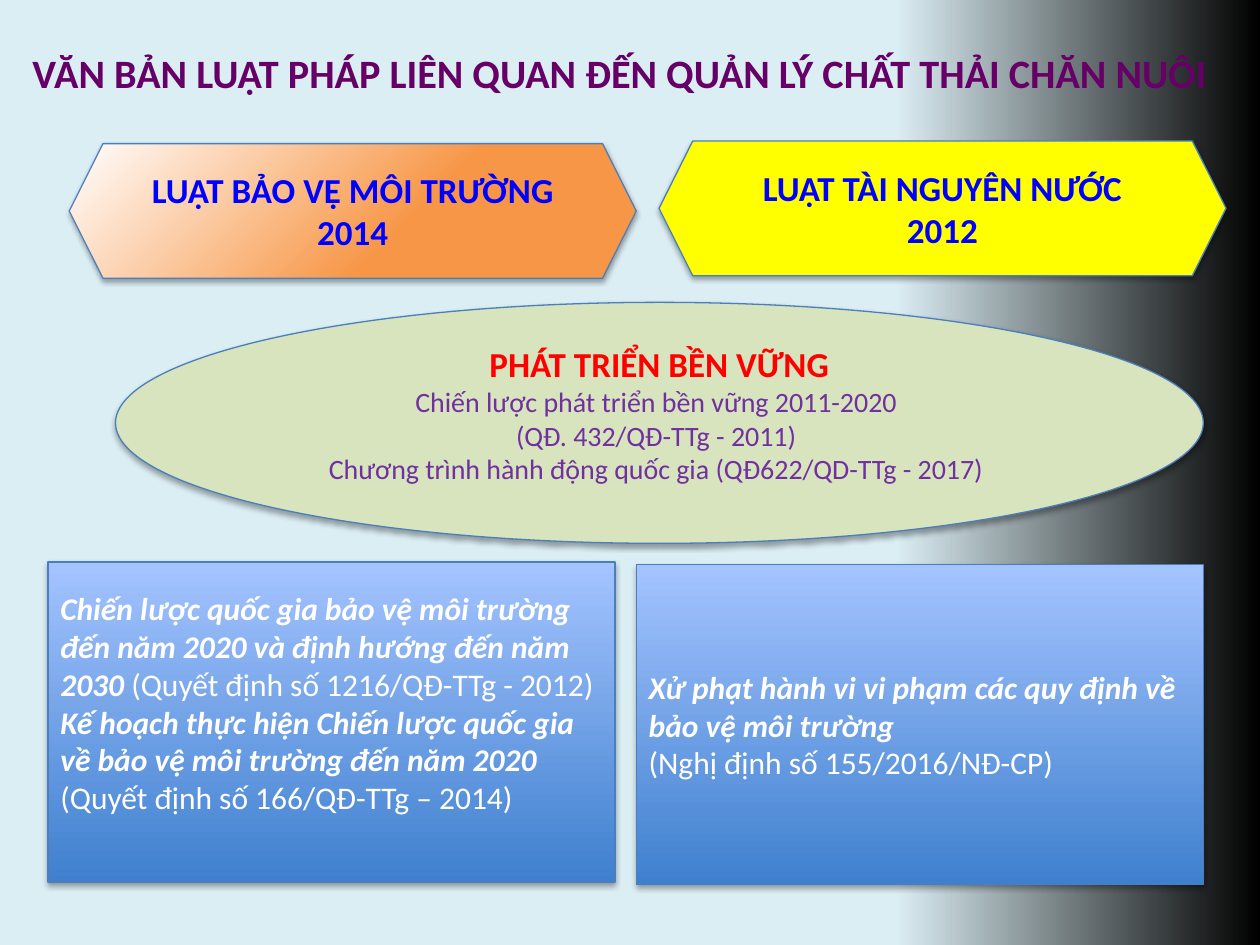
from dataclasses import dataclass
from typing import Optional

from pptx import Presentation
from pptx.dml.color import RGBColor
from pptx.dml.fill import FillFormat
from pptx.enum.shapes import MSO_SHAPE
from pptx.enum.text import MSO_ANCHOR, PP_ALIGN
from pptx.oxml import parse_xml
from pptx.oxml.ns import nsdecls, qn
from pptx.shapes.autoshape import Shape
from pptx.slide import Slide
from pptx.text.text import TextFrame
from pptx.util import Pt

WHITE = RGBColor(0xFF, 0xFF, 0xFF)
BLACK = RGBColor(0x00, 0x00, 0x00)
PALE_BLUE = RGBColor(0xDB, 0xEE, 0xF4)
DEEP_BLUE = RGBColor(0x3F, 0x80, 0xCE)
LIGHT_BLUE = RGBColor(0xA4, 0xC4, 0xFF)
OUTLINE_BLUE = RGBColor(0x4B, 0x7E, 0xBC)
PURE_BLUE = RGBColor(0x00, 0x00, 0xFF)
ORANGE = RGBColor(0xF7, 0x96, 0x46)
YELLOW = RGBColor(0xFF, 0xFF, 0x00)
PALE_GREEN = RGBColor(0xD7, 0xE4, 0xBD)
RED = RGBColor(0xFF, 0x00, 0x00)
VIOLET = RGBColor(0x70, 0x30, 0xA0)
PLUM = RGBColor(0x66, 0x00, 0x66)


@dataclass(frozen=True)
class Style:
    size: float
    color: RGBColor
    bold: bool = False
    italic: bool = False


@dataclass(frozen=True)
class Gradient:
    stops: tuple[tuple[float, RGBColor], tuple[float, RGBColor]]
    angle: Optional[float] = None


@dataclass(frozen=True)
class Panel:
    kind: MSO_SHAPE
    bounds: tuple[float, float, float, float]
    fill: RGBColor | Gradient
    paragraphs: list[list[tuple[str, Style]]]
    alignment: PP_ALIGN = PP_ALIGN.CENTER
    margin_bottom: float = 3.6


TITLE = Style(23, PLUM, bold=True)
LAW = Style(20, PURE_BLUE, bold=True)
GOAL = Style(20, RED, bold=True)
PROGRAMME = Style(16, VIOLET)
DOCUMENT = Style(18, WHITE, bold=True, italic=True)
REFERENCE = Style(18, WHITE)

BACKGROUND = Gradient(((0.71, PALE_BLUE), (1, BLACK)), 0)
BOX_FILL = Gradient(((0, DEEP_BLUE), (1, LIGHT_BLUE)), 90)
CORNER_FILL = Gradient(((0.4, ORANGE), (1, WHITE)))

LAW_SIZE = (324, 77)
BOX_SIZE = (324, 182.9)

PANELS = [
    Panel(MSO_SHAPE.RECTANGLE, (27.4, 321.1, *BOX_SIZE), BOX_FILL, [
        [("Chiến lược quốc gia bảo vệ môi trường đến năm 2020 và định hướng đến năm 2030 ", DOCUMENT),
         ("(Quyết định số 1216/QĐ-TTg - 2012)", REFERENCE)],
        [("Kế hoạch thực hiện Chiến lược quốc gia về bảo vệ môi trường đến năm 2020 ", DOCUMENT),
         ("(Quyết định số 166/QĐ-TTg – 2014)", REFERENCE)],
    ], PP_ALIGN.LEFT, 25.6),
    Panel(MSO_SHAPE.HEXAGON, (39.6, 82.1, *LAW_SIZE), CORNER_FILL,
          [[("LUẬT BẢO VỆ MÔI TRƯỜNG 2014", LAW)]]),
    Panel(MSO_SHAPE.HEXAGON, (376.6, 80.6, *LAW_SIZE), YELLOW,
          [[("LUẬT TÀI NGUYÊN NƯỚC 2012", LAW)]]),
    Panel(MSO_SHAPE.RECTANGLE, (363.6, 322.6, *BOX_SIZE), BOX_FILL, [
        [("Xử phạt hành vi vi phạm các quy định về bảo vệ môi trường", DOCUMENT)],
        [("(Nghị định số 155/2016/NĐ-CP)", REFERENCE)],
    ], PP_ALIGN.LEFT),
    Panel(MSO_SHAPE.OVAL, (66, 172.8, 621.6, 137.7), PALE_GREEN, [
        [("PHÁT TRIỂN BỀN VỮNG", GOAL)],
        [("Chiến lược phát triển bền vững 2011-2020 ", PROGRAMME)],
        [("(QĐ. 432/QĐ-TTg - 2011) ", PROGRAMME)],
        [("Chương trình hành động quốc gia (QĐ622/QD-TTg - 2017) ", PROGRAMME)],
    ], margin_bottom=13.6),
]


def apply_gradient(fill: FillFormat, gradient: Gradient) -> None:
    fill.gradient()
    for stop, (position, color) in zip(fill.gradient_stops, gradient.stops):
        stop.position = position
        stop.color.rgb = color
    if gradient.angle is not None:
        fill.gradient_angle = gradient.angle


def make_radial(shape: Shape) -> None:
    gradient_fill = shape._element.spPr.find(qn("a:gradFill"))
    linear = gradient_fill.find(qn("a:lin"))
    gradient_fill.replace(linear, parse_xml(
        f'<a:path {nsdecls("a")} path="circle">'
        '<a:fillToRect l="100000" t="100000"/></a:path>'))


def add_shadow(shape: Shape) -> None:
    shape.shadow.inherit = False
    shape._element.spPr.find(qn("a:effectLst")).append(parse_xml(
        f'<a:outerShdw {nsdecls("a")} blurRad="{Pt(3.1)}" dist="{Pt(1.8)}" '
        'dir="5400000" rotWithShape="0">'
        '<a:srgbClr val="000000"><a:alpha val="35000"/></a:srgbClr></a:outerShdw>'))


def write_paragraphs(frame: TextFrame, paragraphs: list[list[tuple[str, Style]]],
                     alignment: PP_ALIGN) -> None:
    for index, runs in enumerate(paragraphs):
        paragraph = frame.add_paragraph() if index else frame.paragraphs[0]
        paragraph.alignment = alignment
        for text, style in runs:
            run = paragraph.add_run()
            run.text = text
            run.font.color.rgb = style.color
            values = {"name": "Calibri", "size": Pt(style.size),
                      "bold": style.bold, "italic": style.italic}
            for name, value in values.items():
                setattr(run.font, name, value)


def format_title(slide: Slide) -> None:
    title = slide.shapes.title
    bounds = {"left": Pt(0), "top": Pt(23.8), "width": Pt(709.2), "height": Pt(35.3)}
    for name, value in bounds.items():
        setattr(title, name, value)
    frame = title.text_frame
    frame.word_wrap = True
    frame.vertical_anchor = MSO_ANCHOR.TOP
    write_paragraphs(
        frame,
        [[("VĂN BẢN LUẬT PHÁP LIÊN QUAN ĐẾN QUẢN LÝ CHẤT THẢI CHĂN NUÔI", TITLE)]],
        PP_ALIGN.CENTER)


def add_panel(slide: Slide, panel: Panel) -> None:
    shape = slide.shapes.add_shape(panel.kind, *(Pt(length) for length in panel.bounds))
    if isinstance(panel.fill, Gradient):
        apply_gradient(shape.fill, panel.fill)
        if panel.fill.angle is None:
            make_radial(shape)
    else:
        shape.fill.solid()
        shape.fill.fore_color.rgb = panel.fill
    shape.line.color.rgb = OUTLINE_BLUE
    shape.line.width = Pt(0.75)
    add_shadow(shape)
    frame = shape.text_frame
    values = {"word_wrap": True, "vertical_anchor": MSO_ANCHOR.MIDDLE,
              "margin_bottom": Pt(panel.margin_bottom)}
    for name, value in values.items():
        setattr(frame, name, value)
    write_paragraphs(frame, panel.paragraphs, panel.alignment)


def main() -> None:
    presentation = Presentation()
    presentation.slide_width = Pt(720)
    presentation.slide_height = Pt(540)
    slide = presentation.slides.add_slide(presentation.slide_layouts[5])
    apply_gradient(slide.background.fill, BACKGROUND)
    format_title(slide)
    for panel in PANELS:
        add_panel(slide, panel)
    presentation.save("out.pptx")


if __name__ == "__main__":
    main()
